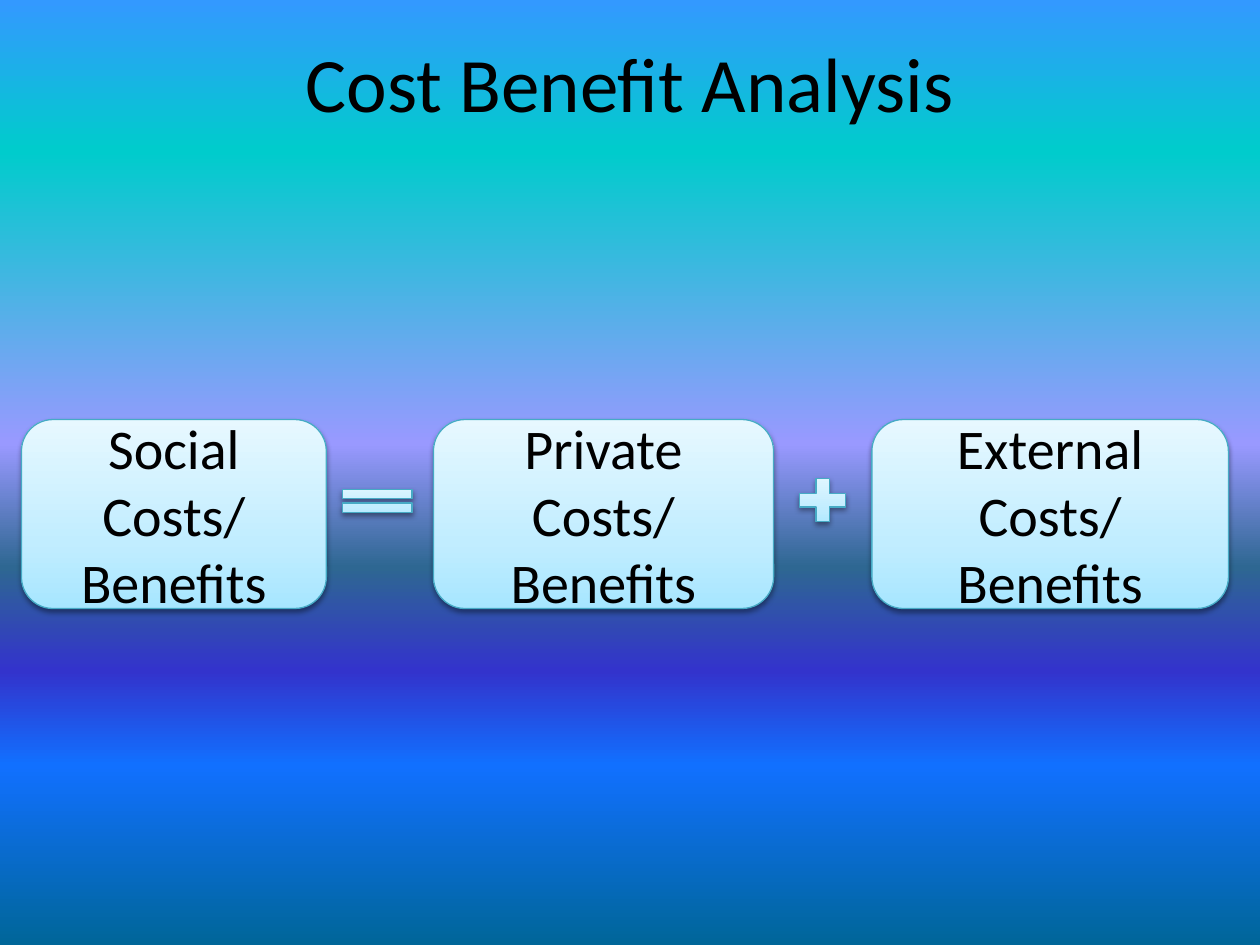
from dataclasses import dataclass

from lxml import etree
from pptx import Presentation
from pptx.dml.color import RGBColor
from pptx.enum.shapes import MSO_SHAPE
from pptx.enum.text import MSO_ANCHOR, PP_ALIGN
from pptx.oxml.ns import qn
from pptx.util import Inches, Pt

ROUNDED = MSO_SHAPE.ROUNDED_RECTANGLE
EQUALS = MSO_SHAPE.MATH_EQUAL
PLUS = MSO_SHAPE.MATH_PLUS
MIDDLE = MSO_ANCHOR.MIDDLE
CENTER = PP_ALIGN.CENTER


@dataclass(frozen=True)
class Theme:
    font: str = "Calibri"
    title_size: int = 44
    term_size: int = 32
    text: str = "000000"
    outline: str = "46AAC5"
    shadow: str = "000000"
    background: tuple = (
        (0, "3399FF"), (16, "00CCCC"), (47, "9999FF"), (60, "2E6792"),
        (71, "3333CC"), (81, "1170FF"), (100, "006699"),
    )
    panel: tuple = ((0, "A7E6FF"), (35, "C1EDFF"), (100, "E7F8FF"))


THEME = Theme()
TERM_TOP, TERM_HEIGHT = 3.33, 1.5
TERMS = (
    ("Social Costs/ Benefits", 0.17, 2.42),
    ("Private Costs/ Benefits", 3.44, 2.7),
    ("External Costs/ Benefits", 6.92, 2.83),
)
OPERATORS = (
    (EQUALS, 2.62, 3.82, 0.75, 0.31),
    (PLUS, 6.28, 3.74, 0.5, 0.46),
)


def set_gradient(owner, fill, stops, angle):
    fill.gradient()
    fill.gradient_angle = angle
    stop_list = owner._element.find(".//" + qn("a:gsLst"))
    stop_list.clear()
    for position, color in stops:
        stop = etree.SubElement(stop_list, qn("a:gs"), pos=str(position * 1000))
        etree.SubElement(stop, qn("a:srgbClr"), val=color)


def add_shadow(shape):
    shape.shadow.inherit = False
    effects = shape._element.spPr.find(qn("a:effectLst"))
    shadow = etree.SubElement(
        effects, qn("a:outerShdw"), blurRad=str(Pt(3.1)), dist=str(Pt(1.6)),
        dir="5400000", rotWithShape="0",
    )
    color = etree.SubElement(shadow, qn("a:srgbClr"), val=THEME.shadow)
    etree.SubElement(color, qn("a:alpha"), val="38000")


def write_text(box, text, size):
    frame = box.text_frame
    frame.word_wrap = True
    frame.vertical_anchor = MIDDLE
    para = frame.paragraphs[0]
    para.text = text
    para.alignment = CENTER
    para.font.name = THEME.font
    para.font.size = Pt(size)
    para.font.color.rgb = RGBColor.from_string(THEME.text)


def add_title(page, text):
    box = page.shapes.add_textbox(Inches(0.5), Inches(0.02), Inches(9), Inches(1.25))
    write_text(box, text, THEME.title_size)


def add_panel(page, kind, left, top, width, height):
    shape = page.shapes.add_shape(
        kind, Inches(left), Inches(top), Inches(width), Inches(height)
    )
    set_gradient(shape, shape.fill, THEME.panel, 90)
    shape.line.color.rgb = RGBColor.from_string(THEME.outline)
    shape.line.width = Pt(0.75)
    add_shadow(shape)
    return shape


def main():
    deck = Presentation()
    deck.slide_width, deck.slide_height = Inches(10), Inches(7.5)
    page = deck.slides.add_slide(deck.slide_layouts[6])
    set_gradient(page, page.background.fill, THEME.background, 270)
    add_title(page, "Cost Benefit Analysis")
    for text, left, width in TERMS:
        term = add_panel(page, ROUNDED, left, TERM_TOP, width, TERM_HEIGHT)
        write_text(term, text, THEME.term_size)
    for kind, left, top, width, height in OPERATORS:
        add_panel(page, kind, left, top, width, height)
    deck.save("out.pptx")


if __name__ == "__main__":
    main()
